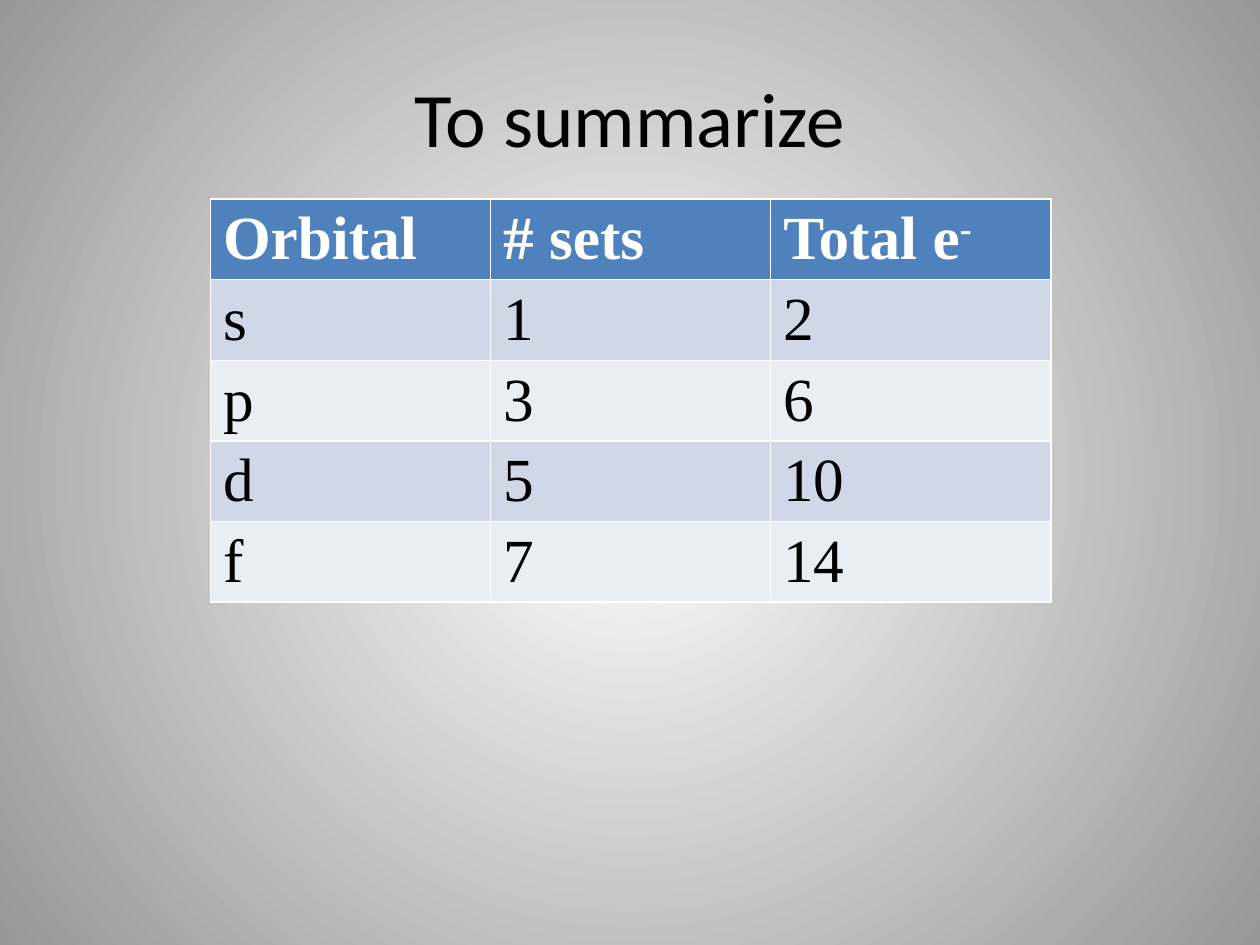
from pptx import Presentation
from pptx.dml.color import RGBColor
from pptx.enum.text import MSO_ANCHOR, PP_ALIGN
from pptx.oxml import parse_xml
from pptx.oxml.ns import nsdecls, qn
from pptx.util import Inches, Pt

ROWS = [
    ["Orbital", "# sets", "Total e"],
    ["s", "1", "2"],
    ["p", "3", "6"],
    ["d", "5", "10"],
    ["f", "7", "14"],
]
HEADER_FILL = "4F81BD"
BAND_FILLS = ["E9EDF4", "D0D8E8"]


def rgb(color):
    """Turn a hex string into a colour."""
    return RGBColor.from_string(color)


def add_run(p, text, font, size, color, bold=False):
    """Add a formatted run to a paragraph."""
    r = p.add_run()
    r.text = text
    r.font.name = font
    r.font.size = Pt(size)
    r.font.bold = bold
    r.font.color.rgb = rgb(color)
    return r


def set_background(s, center, edge):
    """Give the slide a radial gradient from its center to its edge."""
    fill = s.background.fill
    fill.gradient()
    for stop, position, color in zip(fill.gradient_stops, (0, 1), (center, edge)):
        stop.position = position
        stop.color.rgb = rgb(color)
    lin = s._element.find(".//" + qn("a:lin"))
    lin.getparent().replace(lin, parse_xml(
        f'<a:path {nsdecls("a")} path="circle">'
        '<a:fillToRect l="50000" t="50000" r="50000" b="50000"/></a:path>'))


def set_title(s, text):
    """Place and fill the title placeholder."""
    sp = s.shapes.title
    sp.left, sp.top = Inches(0.5), Inches(0.3)
    sp.width, sp.height = Inches(9), Inches(1.25)
    tf = sp.text_frame
    tf.vertical_anchor = MSO_ANCHOR.MIDDLE
    p = tf.paragraphs[0]
    p.alignment = PP_ALIGN.CENTER
    add_run(p, text, "Calibri", 44, "000000")


def add_orbital_table(s):
    """Add the table of orbitals with a header and banded rows."""
    table = s.shapes.add_table(len(ROWS), len(ROWS[0]), Inches(1.67), Inches(1.58),
                               Inches(6.67), Inches(3.2)).table
    for i, row in enumerate(ROWS):
        header = i == 0
        for j, text in enumerate(row):
            cell = table.cell(i, j)
            cell.fill.solid()
            cell.fill.fore_color.rgb = rgb(HEADER_FILL if header else BAND_FILLS[i % 2])
            add_cell_text(cell, text, header)
    charge = add_cell_text(table.cell(0, 2), "-", True)
    charge.font._element.set("baseline", "30000")


def add_cell_text(cell, text, header):
    """Add a run in the header or body style to a cell."""
    color = "FFFFFF" if header else "000000"
    return add_run(cell.text_frame.paragraphs[0], text, "Times New Roman", 35, color, header)


def main():
    """Build and save the slide."""
    prs = Presentation()
    prs.slide_width, prs.slide_height = Inches(10), Inches(7.5)
    s = prs.slides.add_slide(prs.slide_layouts[5])
    set_background(s, "FFFFFF", "979797")
    set_title(s, "To summarize")
    add_orbital_table(s)
    prs.save("out.pptx")


if __name__ == "__main__":
    main()
